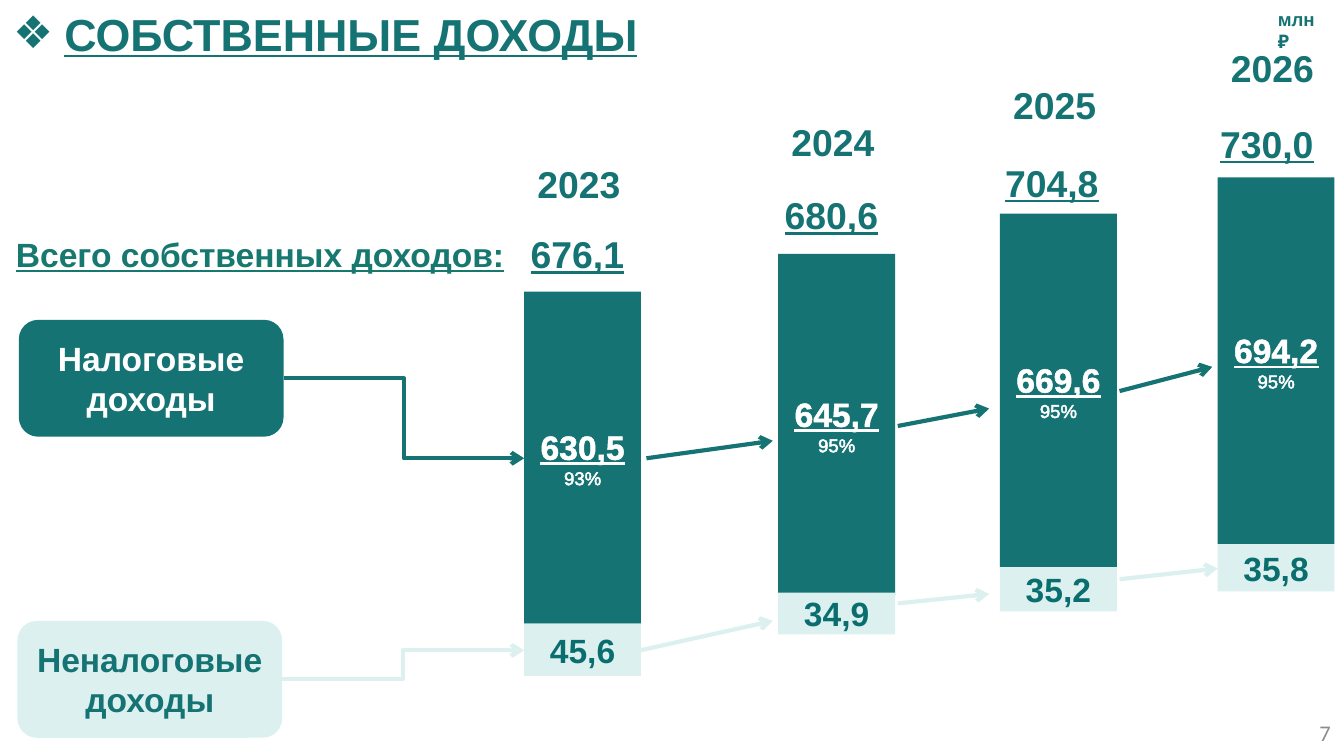
import pptx
import pptx.util
import pptx.dml.color
import pptx.enum.shapes
import pptx.enum.text
import pptx.oxml.ns
import lxml.etree

Inches = pptx.util.Inches
Pt = pptx.util.Pt
RGBColor = pptx.dml.color.RGBColor
SHAPE = pptx.enum.shapes.MSO_SHAPE
CONNECTOR = pptx.enum.shapes.MSO_CONNECTOR
ALIGN = pptx.enum.text.PP_ALIGN
ANCHOR = pptx.enum.text.MSO_ANCHOR
AUTO_SIZE = pptx.enum.text.MSO_AUTO_SIZE
qn = pptx.oxml.ns.qn

TEAL = RGBColor(0x16, 0x73, 0x73)
DEEP_TEAL = RGBColor(0x0A, 0x6E, 0x6E)
GREEN_TEAL = RGBColor(0x16, 0x78, 0x6E)
PALE = RGBColor(0xDC, 0xF0, 0xF0)
WHITE = RGBColor(0xFF, 0xFF, 0xFF)
GREY = RGBColor(0x8C, 0x8C, 0x8C)

BAR_WIDTH = 0.87
# year, total, tax income, tax share, non-tax income,
# bar left, year top, total left, total top, tax top, tax height, non-tax top, height
YEARS = [
    ("2023", "676,1", "630,5", "93%", "45,6",
     3.9, 1.15, 3.85, 1.67, 2.17, 2.47, 4.64, 0.39),
    ("2024", "680,6", "645,7", "95%", "34,9",
     5.79, 0.84, 5.74, 1.38, 1.89, 2.54, 4.41, 0.31),
    ("2025", "704,8", "669,6", "95%", "35,2",
     7.44, 0.56, 7.38, 1.14, 1.59, 2.63, 4.22, 0.33),
    ("2026", "730,0", "694,2", "95%", "35,8",
     9.06, 0.29, 8.98, 0.85, 1.32, 2.73, 4.05, 0.35),
]
# start x, start y, end x, end y
TAX_ARROWS = [(4.81, 3.41, 5.75, 3.28), (6.68, 3.17, 7.36, 3.04),
              (8.33, 2.91, 9.02, 2.73)]
NON_TAX_ARROWS = [(4.76, 4.84, 5.75, 4.62), (6.68, 4.49, 7.36, 4.42),
                  (8.33, 4.31, 9.06, 4.23)]


def style(paragraph, size, color, bold=True, underline=False, font="Arial"):
    for run in paragraph.runs:
        run.font.name = font
        run.font.size = Pt(size)
        run.font.bold = bold
        run.font.underline = underline
        run.font.color.rgb = color


def add_label(slide, box, text, size, color=TEAL, wrap=True, **look):
    label = slide.shapes.add_textbox(*map(Inches, box))
    label.text_frame.word_wrap = wrap
    label.text_frame.auto_size = AUTO_SIZE.SHAPE_TO_FIT_TEXT
    label.text_frame.text = text
    style(label.text_frame.paragraphs[0], size, color, **look)
    return label


def add_block(slide, box, preset, fill, text, color):
    block = slide.shapes.add_shape(preset, *map(Inches, box))
    block.shadow.inherit = False
    block.fill.solid()
    block.fill.fore_color.rgb = fill
    block.line.fill.background()
    frame = block.text_frame
    frame.word_wrap = True
    frame.vertical_anchor = ANCHOR.MIDDLE
    frame.text = text
    for paragraph in frame.paragraphs:
        paragraph.alignment = ALIGN.CENTER
        style(paragraph, 18, color)
    return block


def outline_text(run):
    outline = lxml.etree.Element(qn("a:ln"), w=str(Pt(0.75)))
    fill = lxml.etree.SubElement(outline, qn("a:solidFill"))
    lxml.etree.SubElement(fill, qn("a:srgbClr"), val=str(WHITE))
    run.font._element.insert(0, outline)


def add_arrow(slide, ends, color, kind=CONNECTOR.STRAIGHT):
    arrow = slide.shapes.add_connector(kind, *map(Inches, ends))
    arrow.line.color.rgb = color
    arrow.line.width = Pt(2.25)
    lxml.etree.SubElement(arrow.line._get_or_add_ln(), qn("a:tailEnd"), type="arrow")
    lxml.etree.SubElement(arrow._element.spPr, qn("a:effectLst"))


def add_heading(slide, left, top):
    heading = add_label(slide, (left, top, 4.89, 0.5), "СОБСТВЕННЫЕ ДОХОДЫ", 24,
                        wrap=False, underline=True)
    properties = heading.text_frame.paragraphs[0]._p.get_or_add_pPr()
    properties.set("marL", str(Inches(0.38)))
    properties.set("indent", str(-Inches(0.38)))
    lxml.etree.SubElement(properties, qn("a:buFont"), typeface="Arial")
    lxml.etree.SubElement(properties, qn("a:buChar"), char="❖")


def add_year(slide, year, total, tax, share, non_tax, left, year_top,
             total_left, total_top, tax_top, tax_height, non_tax_top, non_tax_height):
    add_label(slide, (left, year_top, 0.88, 0.44), year, 20)
    add_label(slide, (total_left, total_top, 1.03, 0.44), total, 20, underline=True)

    # Tax part of the bar with its share
    bar = add_block(slide, (left, tax_top, BAR_WIDTH, tax_height), SHAPE.RECTANGLE,
                    TEAL, f"{tax}\n{share}", WHITE)
    amount, percent = bar.text_frame.paragraphs
    style(amount, 18, WHITE, underline=True)
    style(percent, 10, WHITE, bold=False)
    for paragraph in (amount, percent):
        outline_text(paragraph.runs[0])

    # Non-tax part below
    add_block(slide, (left, non_tax_top, BAR_WIDTH, non_tax_height),
              SHAPE.RECTANGLE, PALE, non_tax, DEEP_TEAL)


def add_category(slide, box, text, fill, color, target, arrows):
    """Rounded label, its elbow to the first bar and the arrows between bars."""
    left, top, width, height = box
    add_block(slide, box, SHAPE.ROUNDED_RECTANGLE, fill, text, color)
    add_arrow(slide, (left + width, top + height / 2, *target), fill, CONNECTOR.ELBOW)
    for ends in arrows:
        add_arrow(slide, ends, fill)


def main():
    deck = pptx.Presentation()
    deck.slide_width = Inches(10)
    deck.slide_height = deck.slide_width * 9 // 16
    slide = deck.slides.add_slide(deck.slide_layouts[6])

    # Heading, unit and total caption
    add_heading(slide, 0, 0)
    add_label(slide, (9.41, 0.01, 0.59, 0.27), "млн ₽", 10, wrap=False)
    add_label(slide, (0.02, 1.69, 3.87, 0.4), "Всего собственных доходов:", 18,
              GREEN_TEAL, wrap=False, underline=True)

    # Bars, then the two income categories
    for year in YEARS:
        add_year(slide, *year)
    add_category(slide, (0.14, 2.38, 1.97, 0.87), "Налоговые доходы",
                 TEAL, WHITE, (3.9, 3.41), TAX_ARROWS)
    add_category(slide, (0.13, 4.62, 1.97, 0.87), "Неналоговые доходы",
                 PALE, TEAL, (3.9, 4.84), NON_TAX_ARROWS)

    # Page number
    number = add_label(slide, (7.67, 5.3, 2.33, 0.3), "7", 12, GREY,
                       bold=False, font="Calibri")
    number.text_frame.auto_size = AUTO_SIZE.NONE
    number.text_frame.vertical_anchor = ANCHOR.MIDDLE
    number.text_frame.paragraphs[0].alignment = ALIGN.RIGHT

    deck.save("out.pptx")


if __name__ == "__main__":
    main()
